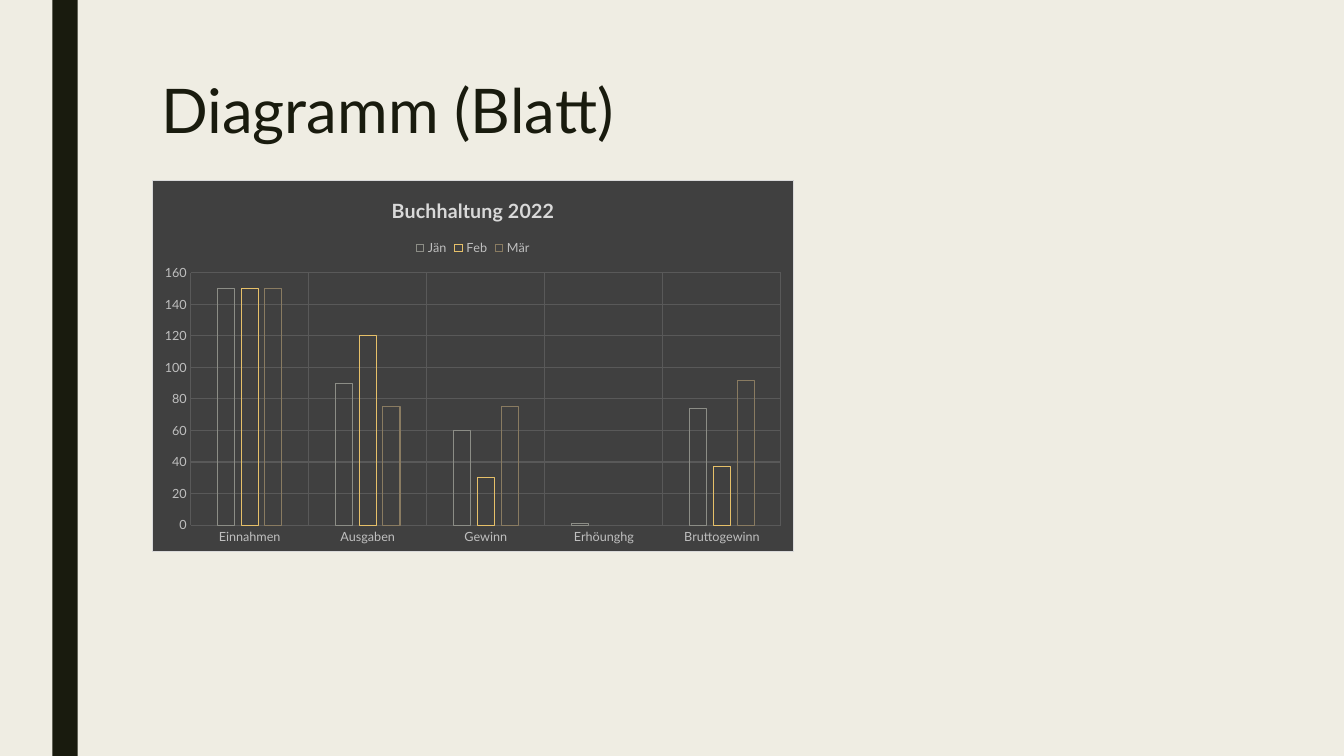
from lxml import etree
from pptx import Presentation
from pptx import util as u
from pptx.chart.data import CategoryChartData
from pptx.dml.color import RGBColor
from pptx.enum import chart as kinds, shapes, text
from pptx.oxml import parse_xml
from pptx.oxml.ns import nsdecls, qn

FONT = "Lato"
INK, PAPER, PANEL, GRID, LABEL, PALE = (
    "191B0E", "EFEDE3", "404040", "595959", "BFBFBF", "D9D9D9")
CATEGORIES = ["Einnahmen", "Ausgaben", "Gewinn", "Erhöunghg", "Bruttogewinn"]
SERIES = [
    ("Jän", "8C8D86", [150, 90, 60, 1, 74]),
    ("Feb", "E6C069", [150, 120, 30, None, 37]),
    ("Mär", "897B61", [150, 75, 75, None, 92]),
]
PLOT_AREA = {"x": 0.06, "y": 0.25, "w": 0.92, "h": 0.68}


def color(value):
    return RGBColor.from_string(value)


class SlideBuilder:
    """Holds the deck style and the current slide, and adds its elements."""

    def __init__(self, deck):
        self.slide = deck.slides.add_slide(deck.slide_layouts[5])
        fill = self.slide.background.fill
        fill.solid()
        fill.fore_color.rgb = color(PAPER)

    def style(self, font, size, value, bold=False):
        font.name, font.size, font.bold = FONT, u.Pt(size), bold
        font.color.rgb = color(value)

    def outline(self, line, value):
        line.color.rgb = color(value)
        line.width = u.Pt(0.75)

    def bar(self, left, top, width, height):
        bar = self.slide.shapes.add_shape(
            shapes.MSO_SHAPE.RECTANGLE, left, top, width, height)
        bar.shadow.inherit = False
        bar.fill.solid()
        bar.fill.fore_color.rgb = color(INK)
        bar.line.fill.background()

    def title(self, words, left, top, width, height):
        box = self.slide.shapes.title
        box.left, box.top, box.width, box.height = left, top, width, height
        frame = box.text_frame
        frame.text = words
        frame.auto_size = text.MSO_AUTO_SIZE.NONE
        frame.vertical_anchor = text.MSO_ANCHOR.TOP
        para = frame.paragraphs[0]
        para.alignment = text.PP_ALIGN.LEFT
        para.line_spacing = 0.89
        self.style(para.font, 44, INK)

    def column_chart(self, heading, left, top, width, height):
        data = CategoryChartData()
        data.categories = CATEGORIES
        for name, _, values in SERIES:
            data.add_series(name, values)
        chart = self.slide.shapes.add_chart(
            kinds.XL_CHART_TYPE.COLUMN_CLUSTERED,
            left, top, width, height, data).chart
        self.style(chart.font, 10, LABEL)

        chart.has_title = True
        frame = chart.chart_title.text_frame
        frame.text = heading
        self.style(frame.paragraphs[0].font, 14, PALE, bold=True)
        chart.chart_title.include_in_layout = False

        chart.has_legend = True
        chart.legend.position = kinds.XL_LEGEND_POSITION.TOP
        chart.legend.include_in_layout = False
        self.style(chart.legend.font, 9, LABEL)

        plot = chart.plots[0]
        plot.gap_width, plot.overlap = 315, -40
        plot.vary_by_categories = False
        for series, (_, line_color, _) in zip(plot.series, SERIES):
            series.format.fill.background()
            self.outline(series.format.line, line_color)

        for axis in (chart.category_axis, chart.value_axis):
            axis.major_tick_mark = kinds.XL_TICK_MARK.NONE
            axis.minor_tick_mark = kinds.XL_TICK_MARK.NONE
            axis.format.line.fill.background()
            axis.has_major_gridlines = True
            self.outline(axis.major_gridlines.format.line, GRID)
            self.style(axis.tick_labels.font, 9, LABEL)
        chart.value_axis.minimum_scale = 0
        chart.value_axis.maximum_scale = 160
        chart.value_axis.major_unit = 20
        self.place_plot(chart)
        self.fill_panel(chart)

    def place_plot(self, chart):
        area = chart.element.find(f".//{qn('c:plotArea')}")
        for layout in area.findall(qn("c:layout")):
            area.remove(layout)
        layout = etree.Element(qn("c:layout"))
        manual = etree.SubElement(layout, qn("c:manualLayout"))
        settings = {"layoutTarget": "inner", "xMode": "edge", "yMode": "edge"}
        for tag, value in {**settings, **PLOT_AREA}.items():
            etree.SubElement(manual, qn(f"c:{tag}")).set("val", str(value))
        area.insert(0, layout)

    def fill_panel(self, chart):
        panel = parse_xml(
            f'<c:spPr {nsdecls("c", "a")}>'
            f'<a:solidFill><a:srgbClr val="{PANEL}"/></a:solidFill>'
            f'<a:ln w="{u.Pt(0.75)}"><a:solidFill><a:srgbClr val="{PALE}"/>'
            '</a:solidFill></a:ln></c:spPr>')
        chart.element.find(qn("c:chart")).addnext(panel)


def main():
    deck = Presentation()
    deck.slide_width, deck.slide_height = u.Cm(33.87), u.Cm(19.05)
    page = SlideBuilder(deck)
    page.bar(u.Cm(1.32), u.Cm(0), u.Cm(0.64), deck.slide_height)
    page.title("Diagramm (Blatt)", u.Cm(3.81), u.Cm(1.9), u.Cm(26.67), u.Cm(4.11))
    page.column_chart("Buchhaltung 2022", u.Cm(3.82), u.Cm(4.53), u.Cm(16.2), u.Cm(9.37))
    deck.save("out.pptx")


if __name__ == "__main__":
    main()
